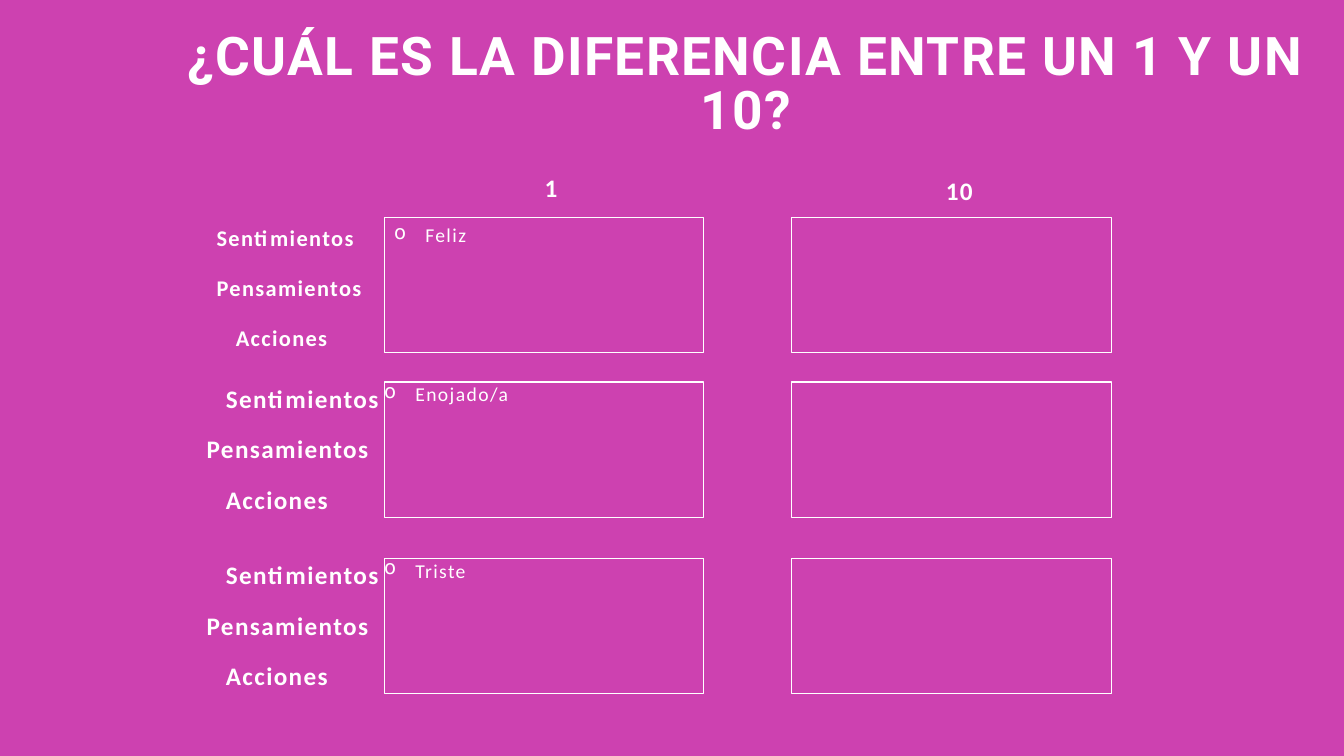
import pptx
import pptx.dml.color
import pptx.enum.shapes
import pptx.enum.text
import pptx.oxml.ns
import pptx.util
from lxml import etree

COLORS = {"background": "CD41B0", "ink": "FFFFFF"}
SLIDE_SIZE = (13.33, 7.5)
BOX_SIZE = (3.17, 1.34)
BOX_LEFTS = (3.81, 7.85)
LABEL_RIGHT = BOX_LEFTS[0]
LABEL_WIDE, LABEL_NARROW, LABEL_HEIGHT = 1.76, 1.57, 0.45
LABEL_OFFSETS = (0.01, 0.51, 1.01)
LABELS = ("Sentimientos", "Pensamientos", "Acciones")
BULLET_INDENT = 0.31
INSETS, NO_INSETS = (0.1, 0.05), (0, 0)

# Top, feeling, label size, label widths, insets, space before and after
ROWS = (
    (2.16, "Feliz", 16, (LABEL_WIDE, LABEL_WIDE, LABEL_NARROW), INSETS, (10, 12)),
    (3.79, "Enojado/a", 18, (LABEL_NARROW, LABEL_WIDE, LABEL_NARROW), NO_INSETS, (4, 0)),
    (5.54, "Triste", 18, (LABEL_NARROW, LABEL_WIDE, LABEL_NARROW), NO_INSETS, (4, 0)),
)
# Text, left, top
HEADERS = (("1", 4.68, 1.71), ("10", 8.73, 1.74))


def color(name):
    return pptx.dml.color.RGBColor.from_string(COLORS[name])


def inches(*lengths):
    return [pptx.util.Inches(length) for length in lengths]


def write(shape, text, size, font="Calibri", bold=True, centered=False,
          insets=NO_INSETS, spacing=(10, 12)):
    """Fill a shape with one letter-spaced paragraph and return it."""
    frame = shape.text_frame
    frame.word_wrap = True
    frame.auto_size = pptx.enum.text.MSO_AUTO_SIZE.NONE
    frame.vertical_anchor = pptx.enum.text.MSO_ANCHOR.TOP
    frame.margin_left = frame.margin_right = pptx.util.Inches(insets[0])
    frame.margin_top = frame.margin_bottom = pptx.util.Inches(insets[1])
    paragraph = frame.paragraphs[0]
    run = paragraph.add_run()
    run.text = text
    run.font._element.set("spc", "100")
    alignments = pptx.enum.text.PP_ALIGN
    paragraph.alignment = alignments.CENTER if centered else alignments.LEFT
    paragraph.space_before, paragraph.space_after = map(pptx.util.Pt, spacing)
    for target in (paragraph.font, run.font):
        target.name = font
        target.size = pptx.util.Pt(size)
        target.bold = bold
        target.color.rgb = color("ink")
    return paragraph


def add_bullet(paragraph):
    properties = paragraph._p.get_or_add_pPr()
    indent = pptx.util.Inches(BULLET_INDENT)
    properties.set("marL", str(indent))
    properties.set("indent", str(-indent))
    bullet = etree.Element(pptx.oxml.ns.qn("a:buChar"), char="o")
    defaults = properties.find(pptx.oxml.ns.qn("a:defRPr"))
    defaults.addprevious(bullet)


def add_label(slide, text, left, top, width, size, **style):
    label = slide.shapes.add_textbox(*inches(left, top, width, LABEL_HEIGHT))
    write(label, text, size, **style)


def add_box(slide, left, top):
    box = slide.shapes.add_shape(
        pptx.enum.shapes.MSO_SHAPE.RECTANGLE, *inches(left, top, *BOX_SIZE))
    box.shadow.inherit = False
    box.fill.background()
    box.line.color.rgb = color("ink")
    box.line.width = pptx.util.Pt(0.75)
    return box


def add_title(slide, text):
    title = slide.shapes.title
    title.left, title.top, title.width, title.height = inches(1.5, 0.27, 11.8, 0.75)
    paragraph = write(title, text, 38, font="Roboto", centered=True, insets=INSETS)
    paragraph.line_spacing = 0.85


def add_row(slide, top, feeling, size, widths, insets, spacing):
    for text, offset, width in zip(LABELS, LABEL_OFFSETS, widths):
        add_label(slide, text, LABEL_RIGHT - width, top + offset, width, size,
                  insets=insets)
    feeling_box, _ = [add_box(slide, left, top) for left in BOX_LEFTS]
    add_bullet(write(feeling_box, feeling, 14, bold=False, insets=insets,
                     spacing=spacing))


def main():
    presentation = pptx.Presentation()
    presentation.slide_width, presentation.slide_height = inches(*SLIDE_SIZE)
    slide = presentation.slides.add_slide(presentation.slide_layouts[5])
    slide.background.fill.solid()
    slide.background.fill.fore_color.rgb = color("background")

    # Title and column headers
    add_title(slide, "¿CUÁL ES LA DIFERENCIA ENTRE UN 1 Y UN 10?")
    for text, left, top in HEADERS:
        add_label(slide, text, left, top, LABEL_NARROW, 18, centered=True)

    # One row of labels and boxes per feeling
    for row in ROWS:
        add_row(slide, *row)

    presentation.save("out.pptx")


if __name__ == "__main__":
    main()
